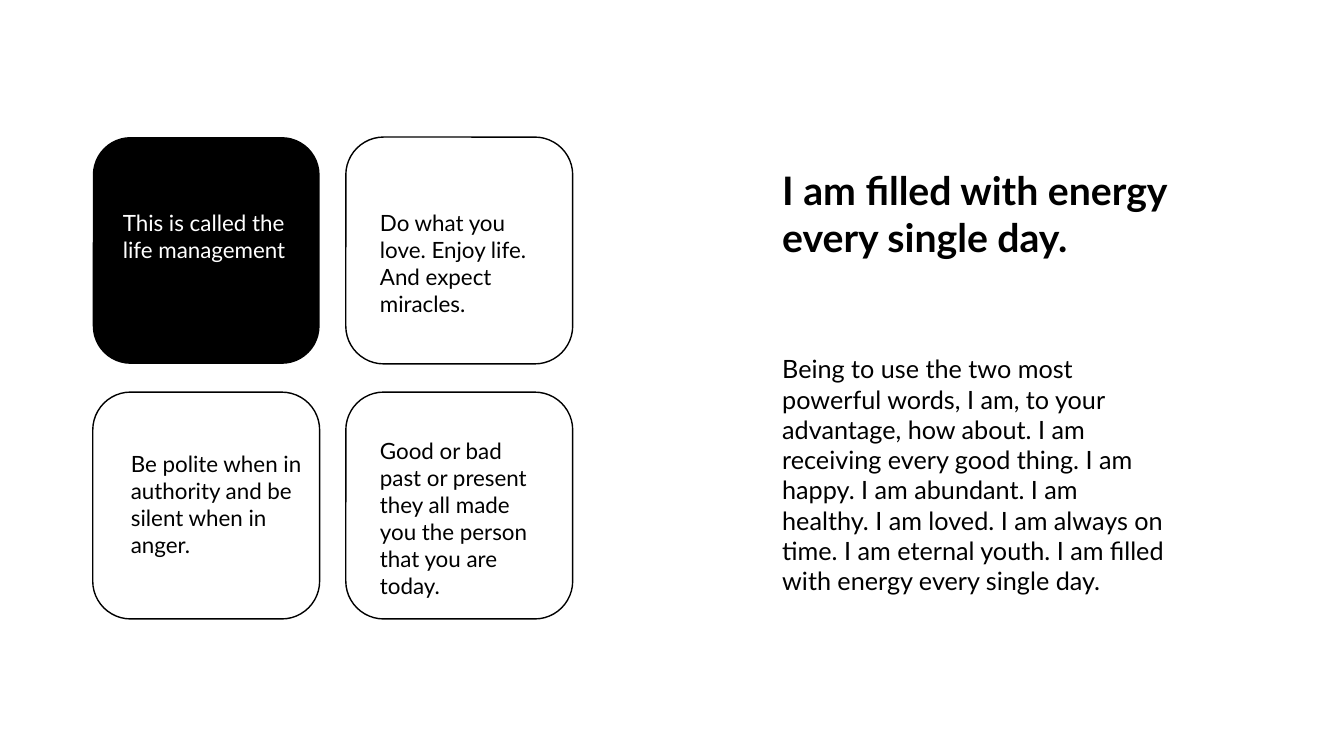
from pptx import Presentation
from pptx.dml.color import RGBColor
from pptx.enum import shapes, text
from pptx.util import Inches, Pt

BLACK, WHITE = "000000", "FFFFFF"


def rgb(color):
    return RGBColor.from_string(color)


def add_text(slide, box, wording, size, color=BLACK, bold=False):
    tf = slide.shapes.add_textbox(*map(Inches, box)).text_frame
    tf.word_wrap = True
    tf.auto_size = text.MSO_AUTO_SIZE.SHAPE_TO_FIT_TEXT
    p = tf.paragraphs[0]
    p.text = wording
    p.font.name = "Lato"
    p.font.size = Pt(size)
    p.font.bold = bold
    p.font.color.rgb = rgb(color)


prs = Presentation()
prs.slide_width, prs.slide_height = Inches(13.33), Inches(7.5)
s = prs.slides.add_slide(prs.slide_layouts[6])

# Two-by-two grid of cards: column, row, fill, text color, text box, wording
LEFT, TOP, SIDE = 0.92, 1.36, 2.25
COLUMN_STEP, ROW_STEP = 2.51, 2.53
cards = [
    (0, 0, BLACK, WHITE, (1.12, 2.03, 1.82, 0.64),
     "This is called the life management"),
    (1, 0, WHITE, BLACK, (3.67, 2.03, 1.88, 0.91),
     "Do what you love. Enjoy life. And expect miracles."),
    (0, 1, WHITE, BLACK, (1.2, 4.42, 1.98, 1.18),
     "Be polite when in authority and be silent when in anger."),
    (1, 1, WHITE, BLACK, (3.67, 4.29, 1.82, 1.45),
     "Good or bad past or present they all made you the person that you are today."),
]
for column, row, fill, color, box, wording in cards:
    sp = s.shapes.add_shape(
        shapes.MSO_SHAPE.ROUNDED_RECTANGLE,
        Inches(LEFT + column * COLUMN_STEP), Inches(TOP + row * ROW_STEP),
        Inches(SIDE), Inches(SIDE))
    sp.shadow.inherit = False
    sp.fill.solid()
    sp.fill.fore_color.rgb = rgb(fill)
    if fill == BLACK:
        sp.line.fill.background()
    else:
        sp.line.color.rgb = rgb(BLACK)
        sp.line.width = Pt(1)
    add_text(s, box, wording, 16, color)

# Heading and body on the right
add_text(s, (7.66, 1.6, 4.19, 1.04),
         "I am filled with energy every single day.", 28, bold=True)
add_text(s, (7.66, 3.46, 4, 2.22),
         "Being to use the two most powerful words, I am, to your advantage, "
         "how about. I am receiving every good thing. I am happy. I am abundant. "
         "I am healthy. I am loved. I am always on time. I am eternal youth. "
         "I am filled with energy every single day.", 18)

prs.save("out.pptx")
